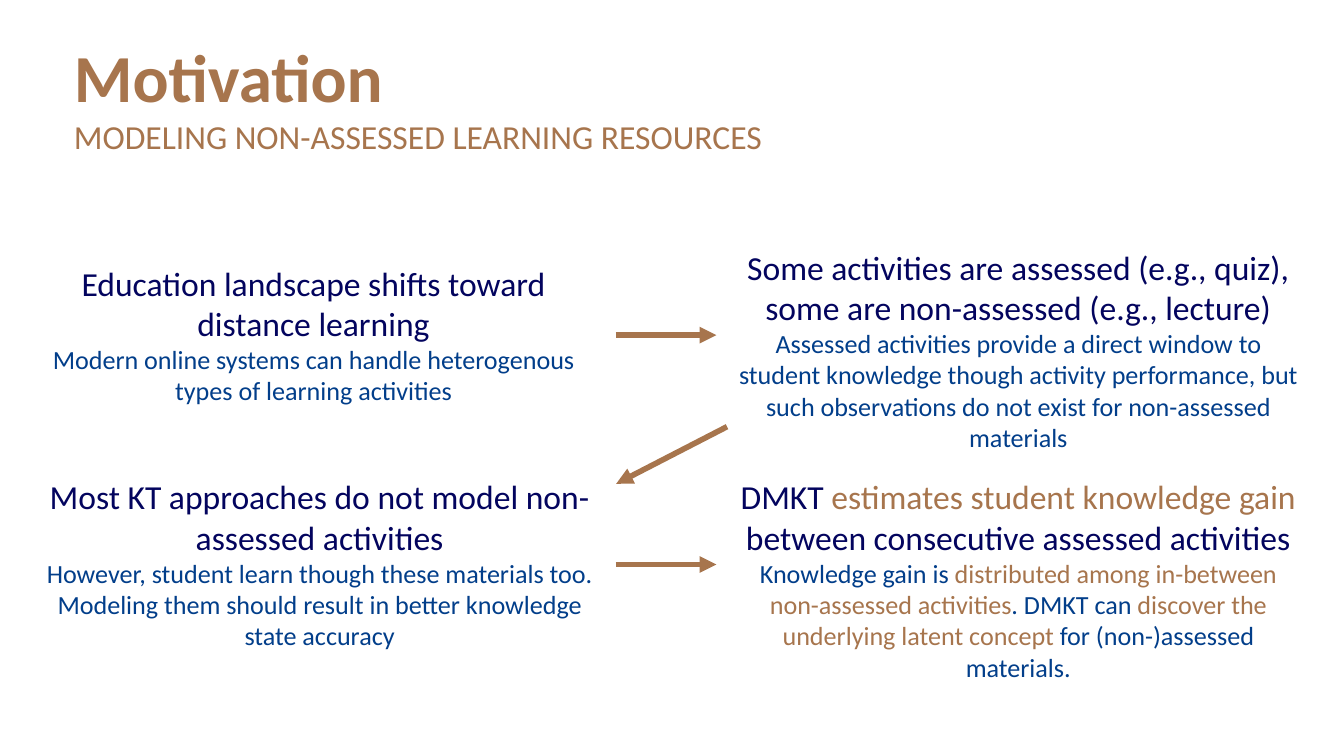
from lxml.etree import SubElement
from pptx import Presentation
from pptx.dml.color import RGBColor
from pptx.enum.shapes import MSO_CONNECTOR
from pptx.enum.text import MSO_ANCHOR, MSO_AUTO_SIZE, PP_ALIGN
from pptx.oxml.ns import qn
from pptx.util import Cm, Pt

HUES = {"tan": "A7754D", "navy": "03045E", "blue": "023E8A"}
FACE = "Calibri"
FRAME = {"word_wrap": True, "auto_size": MSO_AUTO_SIZE.NONE,
         "vertical_anchor": MSO_ANCHOR.TOP,
         "margin_left": Cm(0.25), "margin_right": Cm(0.25),
         "margin_top": Cm(0.13), "margin_bottom": Cm(0.13)}
LEFT = {"alignment": PP_ALIGN.LEFT, "line_spacing": 1.0,
        "space_before": Pt(0), "space_after": Pt(0)}
MID = {**LEFT, "alignment": PP_ALIGN.CENTER}
HEAD = {"name": FACE, "size": Pt(72), "bold": True}
SUB = {"name": FACE, "size": Pt(36), "bold": False}
LEAD = {"name": FACE, "size": Pt(36)}
BODY = {"name": FACE, "size": Pt(28)}


def style(item, form):
    for key, val in form.items():
        setattr(item, key, val)


def write(frame, lines, look):
    style(frame, FRAME)
    for num, (font, parts) in enumerate(lines):
        para = frame.add_paragraph() if num else frame.paragraphs[0]
        style(para, look)
        for text, hue in parts:
            run = para.add_run()
            run.text = text
            style(run.font, font)
            run.font.color.rgb = RGBColor.from_string(HUES[hue])


deck = Presentation()
deck.slide_width, deck.slide_height = Cm(50.8), Cm(28.58)
slide = deck.slides.add_slide(deck.slide_layouts[5])

title = slide.shapes.title
style(title, {"left": Cm(2.54), "top": Cm(1.22),
              "width": Cm(45.72), "height": Cm(4.88)})
write(title.text_frame, [
    (HEAD, [("Motivation", "tan")]),
    (SUB, [("MODELING NON-ASSESSED LEARNING RESOURCES", "tan")]),
], LEFT)

blocks = [
    (0.84, 9.8, 22.02, 5.74,
     [("Education landscape shifts toward distance learning", "navy")],
     [("Modern online systems can handle heterogenous types of learning "
       "activities", "blue")]),
    (27.48, 9.19, 22.02, 6.93,
     [("Some activities are assessed (e.g., quiz), some are non-assessed "
       "(e.g., lecture)", "navy")],
     [("Assessed activities provide a direct window to student knowledge "
       "though activity performance, but such observations do not exist for "
       "non-assessed materials", "blue")]),
    (1.3, 17.88, 21.56, 6.93,
     [("Most KT approaches do not model non-assessed activities", "navy")],
     [("However, student learn though these materials too. Modeling them "
       "should result in better knowledge state accuracy", "blue")]),
    (27.48, 17.88, 22.02, 6.93,
     [("DMKT ", "navy"),
      ("estimates student knowledge gain ", "tan"),
      ("between consecutive assessed activities", "navy")],
     [("Knowledge gain is ", "blue"),
      ("distributed among in-between non-assessed activities", "tan"),
      (". DMKT can ", "blue"),
      ("discover the underlying latent concept", "tan"),
      (" for (non-)assessed materials.", "blue")]),
]
for *place, lead, body in blocks:
    box = slide.shapes.add_textbox(*map(Cm, place))
    write(box.text_frame, [(LEAD, lead), (BODY, body)], MID)

arrows = [(23.27, 12.67, 27.08, 12.67),
          (23.27, 21.34, 27.08, 21.34),
          (27.48, 16.13, 23.29, 18.29)]
for ends in arrows:
    arrow = slide.shapes.add_connector(MSO_CONNECTOR.STRAIGHT, *map(Cm, ends))
    arrow.line.width = Pt(6)
    arrow.line.color.rgb = RGBColor.from_string(HUES["tan"])
    SubElement(arrow.line._get_or_add_ln(), qn("a:tailEnd"), type="triangle")
    SubElement(arrow._element.spPr, qn("a:effectLst"))

deck.save("out.pptx")
